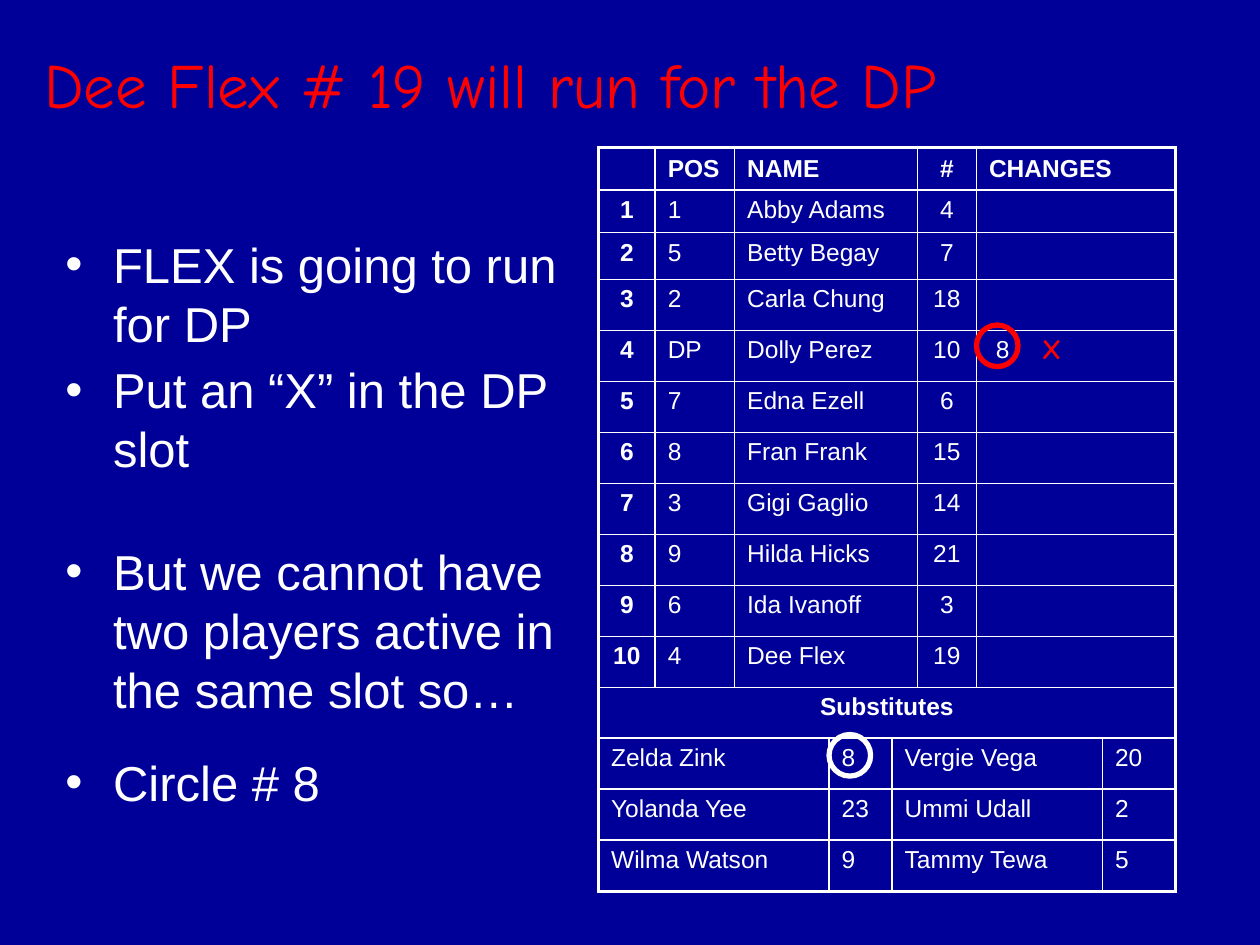
from dataclasses import dataclass

from lxml.etree import SubElement
from pptx import Presentation
from pptx.dml.color import RGBColor
from pptx.enum.shapes import MSO_SHAPE
from pptx.enum.text import MSO_ANCHOR, PP_ALIGN
from pptx.oxml.ns import qn
from pptx.util import Inches, Pt


@dataclass(frozen=True)
class Theme:
    back: str = "000099"
    ink: str = "FFFFFF"
    mark: str = "FF0000"
    sans: str = "Arial"
    hand: str = "Comic Neue"
    title: float = 36
    body: float = 28
    note: float = 16
    cell: float = 14
    lead: float = 33.6
    gap: float = 4.5
    thin: float = 1
    thick: float = 2.25
    ring: float = 3


@dataclass(frozen=True)
class Box:
    left: float
    top: float
    width: float
    height: float

    def place(self) -> tuple:
        return tuple(map(Inches, (self.left, self.top, self.width, self.height)))


@dataclass(frozen=True)
class Points:
    box: Box
    lines: tuple
    inset: float = 0.05


@dataclass(frozen=True)
class Ring:
    box: Box
    color: str


@dataclass(frozen=True)
class Entry:
    text: str
    span: int = 1
    bold: bool = False
    center: bool = False
    middle: bool = False


THEME = Theme()

# Batting order: position, name, number, changes
LINEUP = [
    ("1", "Abby Adams", "4", ""),
    ("5", "Betty Begay", "7", ""),
    ("2", "Carla Chung", "18", ""),
    ("DP", "Dolly Perez", "10", " 8"),
    ("7", "Edna Ezell", "6", ""),
    ("8", "Fran Frank", "15", ""),
    ("3", "Gigi Gaglio", "14", ""),
    ("9", "Hilda Hicks", "21", ""),
    ("6", "Ida Ivanoff", "3", ""),
    ("4", "Dee Flex", "19", ""),
]
SUBS = [
    ("Zelda Zink", "8", "Vergie Vega", "20"),
    ("Yolanda Yee", "23", "Ummi Udall", "2"),
    ("Wilma Watson", "9", "Tammy Tewa", "5"),
]
COLS = [0.45, 0.63, 0.75, 0.5, 0.2, 0.47, 1, 0.58]
ROWS = [0.32, 0.34, 0.37] + [4.86 / 12] * 12
CARD = Box(4.75, 1.17, sum(COLS), sum(ROWS))

NOTES = [
    Points(Box(0.42, 1.25, 4.17, 2.67),
           ("FLEX is going to run for DP", "Put an “X” in the DP slot"), 0.61),
    Points(Box(0.42, 4.25, 4.17, 1.58),
           ("But we cannot have two players active in the same slot so…",)),
    Points(Box(0.42, 5.92, 4.17, 0.67), ("Circle # 8",)),
]
RINGS = [
    Ring(Box(7.75, 2.58, 0.33, 0.33), THEME.mark),
    Ring(Box(6.58, 5.83, 0.33, 0.33), THEME.ink),
]


def style(item, values: dict) -> None:
    for name, value in values.items():
        setattr(item, name, value)


def write(para, text: str, size: float, font: str, color: str, bold: bool = False) -> None:
    run = para.add_run()
    run.text = text
    style(run.font, {"size": Pt(size), "name": font, "bold": bold})
    run.font.color.rgb = RGBColor.from_string(color)


def bullet(para) -> None:
    props = para._p.get_or_add_pPr()
    style_vals = {"marL": Inches(0.38), "indent": Inches(-0.38)}
    for name, value in style_vals.items():
        props.set(name, str(value))
    SubElement(props, qn("a:buFont"), typeface=THEME.sans)
    SubElement(props, qn("a:buChar"), char="•")


def add_points(slide, points: Points) -> None:
    frame = slide.shapes.add_textbox(*points.box.place()).text_frame
    style(frame, {"word_wrap": True, "margin_top": Inches(points.inset)})
    for i, line in enumerate(points.lines):
        para = frame.add_paragraph() if i else frame.paragraphs[0]
        style(para, {"line_spacing": Pt(THEME.lead),
                     "space_before": Pt(THEME.gap if i else 0)})
        bullet(para)
        write(para, line, THEME.body, THEME.sans, THEME.ink)


def add_ring(slide, ring: Ring) -> None:
    shape = slide.shapes.add_shape(MSO_SHAPE.OVAL, *ring.box.place())
    shape.shadow.inherit = False
    shape.fill.background()
    shape.line.color.rgb = RGBColor.from_string(ring.color)
    shape.line.width = Pt(THEME.ring)


def border(cell, outer: dict) -> None:
    props = cell._tc.get_or_add_tcPr()
    for side, edge in outer.items():
        width = Pt(THEME.thick if edge else THEME.thin)
        line = SubElement(props, qn(f"a:ln{side}"), w=str(width))
        SubElement(SubElement(line, qn("a:solidFill")), qn("a:srgbClr"), val=THEME.ink)
    cell.fill.background()


def fill_cell(cell, entry: Entry) -> None:
    para = cell.text_frame.paragraphs[0]
    para.alignment = PP_ALIGN.CENTER if entry.center else PP_ALIGN.LEFT
    cell.vertical_anchor = MSO_ANCHOR.MIDDLE if entry.middle else MSO_ANCHOR.TOP
    if entry.text:
        write(para, entry.text, THEME.cell, THEME.sans, THEME.ink, entry.bold)
    else:
        SubElement(para._p, qn("a:endParaRPr"), sz=str(THEME.cell * 100))


def player(order: str, pos: str, name: str, number: str, change: str,
           head: bool = False) -> list[Entry]:
    return [Entry(order, 1, True, True, head), Entry(pos, 1, head, False, head),
            Entry(name, 3, head, False, head), Entry(number, 1, head, True, head),
            Entry(change, 2, head, False, head)]


def card_rows() -> list[list[Entry]]:
    rows = [player("", "POS", "NAME", "#", "CHANGES", head=True)]
    rows += [player(str(i), *line) for i, line in enumerate(LINEUP, 1)]
    rows.append([Entry("Substitutes", 8, True, True)])
    rows += [[Entry(text, span) for text, span in zip(line, (3, 1, 3, 1))] for line in SUBS]
    return rows


def add_card(slide) -> None:
    table = slide.shapes.add_table(len(ROWS), len(COLS), *CARD.place()).table
    style(table, {"first_row": False, "horz_banding": False})
    for col, width in zip(table.columns, COLS):
        col.width = Inches(width)
    for row, height in zip(table.rows, ROWS):
        row.height = Inches(height)
    for r, entries in enumerate(card_rows()):
        start = 0
        for entry in entries:
            end = start + entry.span
            outer = {"L": start == 0, "R": end == len(COLS),
                     "T": r == 0, "B": r == len(ROWS) - 1}
            for c in range(start, end):
                border(table.cell(r, c), outer)
            if entry.span > 1:
                table.cell(r, start).merge(table.cell(r, end - 1))
            fill_cell(table.cell(r, start), entry)
            start = end


def main() -> None:
    deck = Presentation()
    style(deck, {"slide_width": Inches(10), "slide_height": Inches(7.5)})
    slide = deck.slides.add_slide(deck.slide_layouts[5])
    slide.background.fill.solid()
    slide.background.fill.fore_color.rgb = RGBColor.from_string(THEME.back)

    # Title
    title = slide.shapes.title
    style(title, dict(zip(("left", "top", "width", "height"),
                          Box(0.25, 0.33, 8.5, 0.67).place())))
    title.text_frame.vertical_anchor = MSO_ANCHOR.MIDDLE
    para = title.text_frame.paragraphs[0]
    para.alignment = PP_ALIGN.LEFT
    write(para, "Dee Flex # 19 will run for the DP", THEME.title, THEME.hand, THEME.mark)

    # Lineup card and notes
    add_card(slide)
    for points in NOTES:
        add_points(slide, points)

    # Marks on the card
    cross = slide.shapes.add_textbox(*Box(8.17, 2.58, 0.42, 0.41).place()).text_frame
    cross.word_wrap = True
    write(cross.paragraphs[0], "X", THEME.note, THEME.hand, THEME.mark, True)
    for ring in RINGS:
        add_ring(slide, ring)

    deck.save("out.pptx")


if __name__ == "__main__":
    main()
